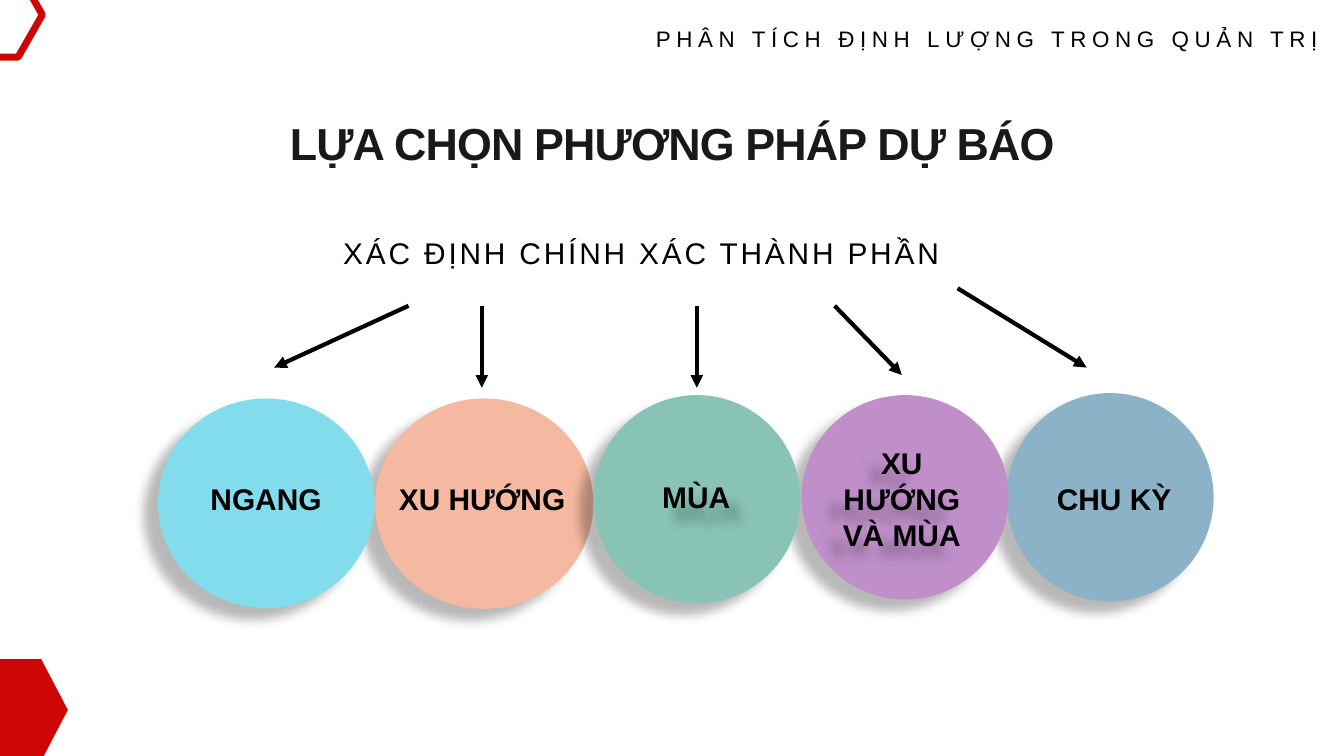
from pptx import Presentation
from pptx.dml.color import RGBColor
from pptx.enum.shapes import MSO_CONNECTOR, MSO_SHAPE
from pptx.enum.text import MSO_AUTO_SIZE, PP_ALIGN
from pptx.oxml import parse_xml
from pptx.oxml.ns import nsdecls
from pptx.util import Inches, Pt

COLUMNS = 20  # square cells: 20 columns by 11.25 rows
BLACK, INK, RED = "000000", "191919", "CD0505"
DOWN_LEFT, DOWN_RIGHT = 141, 50  # shadow directions in degrees


def color(value):
    return RGBColor.from_string(value)


class Board:
    """Holds the style and the current slide."""

    font = "Arial"

    def __init__(self, deck):
        self.slide = deck.slides.add_slide(deck.slide_layouts[6])
        self.shapes = self.slide.shapes
        self.cell = deck.slide_width / COLUMNS
        self.slide.background.fill.solid()
        self.slide.background.fill.fore_color.rgb = color("FFFFFF")

    def grid(self, *cells):
        return [round(n * self.cell) for n in cells]

    def cast_shadow(self, shape, direction):
        shape._element.spPr.append(parse_xml(
            f'<a:effectLst {nsdecls("a")}><a:outerShdw blurRad="{Pt(11.8)}" dist="{Pt(19.7)}" '
            f'dir="{direction * 60000}" algn="tl" rotWithShape="0"><a:srgbClr val="{BLACK}">'
            '<a:alpha val="28000"/></a:srgbClr></a:outerShdw></a:effectLst>'))

    def circle(self, box, fill):
        shape = self.shapes.add_shape(MSO_SHAPE.OVAL, *self.grid(*box))
        shape.fill.solid()
        shape.fill.fore_color.rgb = color(fill)
        shape.line.fill.background()
        self.cast_shadow(shape, DOWN_LEFT)

    def hexagon(self, left, top, width, height, fill=None, line=None):
        inset, middle = 0.24 * width, top + height / 2
        right, bottom = left + width, top + height
        corners = [(left, middle), (left + inset, top), (right - inset, top),
                   (right, middle), (right - inset, bottom), (left + inset, bottom)]
        start, *others = [self.grid(*corner) for corner in corners]
        outline = self.shapes.build_freeform(*start)
        outline.add_line_segments(others, close=True)
        shape = outline.convert_to_shape()
        shape.shadow.inherit = False
        if fill:
            shape.fill.solid()
            shape.fill.fore_color.rgb = color(fill)
        else:
            shape.fill.background()
        if line:
            shape.line.color.rgb = color(line)
            shape.line.width = Pt(7.5)
        else:
            shape.line.fill.background()

    def text(self, box, words, size=32, ink=BLACK, bold=False, align=PP_ALIGN.CENTER,
             tracking=0, leading=None, inset=True, shadow=None):
        shape = self.shapes.add_textbox(*self.grid(*box))
        frame = shape.text_frame
        frame.word_wrap = True
        frame.auto_size = MSO_AUTO_SIZE.SHAPE_TO_FIT_TEXT
        if not inset:
            frame.margin_left = frame.margin_top = frame.margin_right = frame.margin_bottom = 0
        paragraph = frame.paragraphs[0]
        paragraph.alignment = align
        if leading:
            paragraph.line_spacing = Pt(leading)
        run = paragraph.add_run()
        run.text = words
        run.font.name, run.font.size, run.font.bold = self.font, Pt(size), bold
        run.font.color.rgb = color(ink)
        if tracking:
            run.font._element.set("spc", str(round(tracking * 100)))
        if shadow is not None:
            self.cast_shadow(shape, shadow)

    def arrow(self, start, end):
        line = self.shapes.add_connector(MSO_CONNECTOR.STRAIGHT, *self.grid(*start, *end))
        line.line.color.rgb = color(BLACK)
        line.line.width = Pt(4.5)
        line.line._get_or_add_ln().append(parse_xml(f'<a:tailEnd {nsdecls("a")} type="triangle"/>'))
        line._element.spPr.append(parse_xml(f'<a:effectLst {nsdecls("a")}/>'))


# Components from back to front: words, fill, circle, label box, label shadow
COMPONENTS = [
    ("XU HƯỚNG", "F5B9A1", (5.58, 5.93, 3.25, 3.13), (5.75, 7.1, 2.85, 0.64), None),
    ("NGANG", "82DCEB", (2.35, 5.93, 3.22, 3.12), (2.88, 7.1, 2.16, 0.64), None),
    ("CHU KỲ", "8BB2C6", (14.98, 5.85, 3.08, 3.1), (15.5, 7.1, 2.16, 0.64), None),
    ("XU HƯỚNG VÀ MÙA", "C08FCA", (11.93, 5.88, 3.08, 3.04), (12.12, 6.57, 2.6, 1.72), DOWN_LEFT),
    ("MÙA", "88C3B5", (8.83, 5.88, 3.08, 3.1), (9.05, 7.08, 2.62, 0.64), DOWN_RIGHT),
]
ARROWS = [
    ((6.08, 4.55), (4.08, 5.47)),
    ((7.17, 4.55), (7.17, 5.77)),
    ((10.37, 4.55), (10.37, 5.77)),
    ((12.42, 4.55), (13.42, 5.58)),
    ((14.25, 4.29), (16.17, 5.47)),
]


def main():
    deck = Presentation()
    deck.slide_width, deck.slide_height = Inches(20), Inches(11.25)
    board = Board(deck)

    # Circles and their labels
    for _, fill, circle, _, _ in COMPONENTS:
        board.circle(circle, fill)
    for words, _, _, label, shadow in COMPONENTS:
        board.text(label, words, bold=True, shadow=shadow)

    # Corner hexagons
    board.hexagon(-0.87, -0.41, 1.5, 1.26, line=RED)
    board.hexagon(-0.64, 9.81, 1.65, 1.51, fill=RED)

    # Course name, title and lead-in
    board.text((9.76, 0.37, 10.86, 0.4), "PHÂN TÍCH ĐỊNH LƯỢNG TRONG QUẢN TRỊ", size=24,
               align=PP_ALIGN.LEFT, tracking=6, inset=False)
    board.text((4.23, 1.61, 11.55, 0.85), "LỰA CHỌN PHƯƠNG PHÁP DỰ BÁO", size=48, ink=INK,
               bold=True, tracking=-0.9, leading=65.7, inset=False)
    board.text((5.01, 3.45, 9.97, 0.64), "XÁC ĐỊNH CHÍNH XÁC THÀNH PHẦN",
               align=PP_ALIGN.JUSTIFY, tracking=3)

    # Arrows to the components
    for start, end in ARROWS:
        board.arrow(start, end)

    deck.save("out.pptx")


if __name__ == "__main__":
    main()
